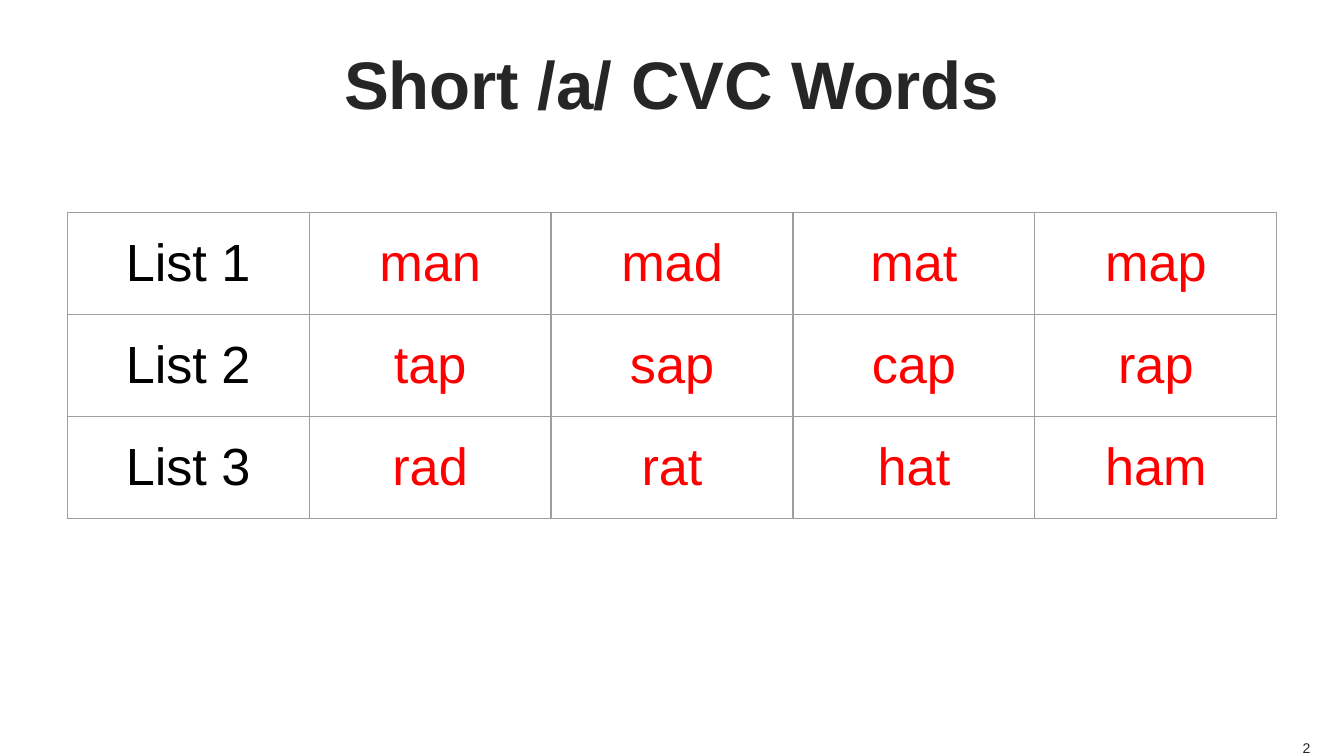
"""Build a slide with a table of short /a/ CVC words."""
import dataclasses

import lxml.etree
import pptx
import pptx.dml.color
import pptx.enum.text
import pptx.oxml.ns
import pptx.util


@dataclasses.dataclass(frozen=True)
class Theme:
    font: str = "Arial"
    heading: str = "262626"
    label: str = "000000"
    word: str = "FF0000"
    grid: str = "9E9E9E"
    title_size: float = 36
    word_size: float = 28
    number_size: float = 7.5


def write(frame, text, size, color, align, bold=False):
    frame.text = text
    frame.paragraphs[0].alignment = align
    font = frame.paragraphs[0].runs[0].font
    font.name = theme.font
    font.size = pptx.util.Pt(size)
    font.bold = bold
    font.color.rgb = pptx.dml.color.RGBColor.from_string(color)


def draw_borders(cell):
    qn = pptx.oxml.ns.qn
    properties = cell._tc.get_or_add_tcPr()
    for position, side in enumerate(("a:lnL", "a:lnR", "a:lnT", "a:lnB")):
        border = lxml.etree.Element(qn(side), w=str(pptx.util.Pt(0.75)))
        fill = lxml.etree.SubElement(border, qn("a:solidFill"))
        lxml.etree.SubElement(fill, qn("a:srgbClr"), val=theme.grid)
        properties.insert(position, border)


theme = Theme()
Pt = pptx.util.Pt
center = pptx.enum.text.PP_ALIGN.CENTER
middle = pptx.enum.text.MSO_ANCHOR.MIDDLE
word_lists = [
    ("List 1", "man", "mad", "mat", "map"),
    ("List 2", "tap", "sap", "cap", "rap"),
    ("List 3", "rad", "rat", "hat", "ham"),
]

deck = pptx.Presentation()
deck.slide_width, deck.slide_height = Pt(720), Pt(405)
slide = deck.slides.add_slide(deck.slide_layouts[5])

heading = slide.shapes.title
heading.left, heading.top, heading.width, heading.height = Pt(27), Pt(6.5), Pt(666), Pt(75.6)
heading_frame = heading.text_frame
heading_frame.margin_left = heading_frame.margin_right = 0
heading_frame.margin_top = heading_frame.margin_bottom = 0
heading_frame.vertical_anchor = middle
heading_frame.word_wrap = True
write(heading_frame, "Short /a/ CVC Words", theme.title_size, theme.heading, center, bold=True)

word_table = slide.shapes.add_table(
    len(word_lists), len(word_lists[0]), Pt(36), Pt(113.8), Pt(648), Pt(164.1)
).table
word_table.first_row = False
word_table.horz_banding = False
for row, words in enumerate(word_lists):
    for column, word in enumerate(words):
        cell = word_table.cell(row, column)
        cell.fill.background()
        cell.vertical_anchor = middle
        color = theme.word if column else theme.label
        write(cell.text_frame, word, theme.word_size, color, center)
        draw_borders(cell)

page_number = slide.shapes.add_textbox(Pt(692.6), Pt(396), Pt(9.4), Pt(9.4))
number_frame = page_number.text_frame
number_frame.margin_left = number_frame.margin_right = 0
number_frame.margin_top = number_frame.margin_bottom = 0
number_frame.word_wrap = False
number_frame.auto_size = pptx.enum.text.MSO_AUTO_SIZE.SHAPE_TO_FIT_TEXT
number_frame.vertical_anchor = pptx.enum.text.MSO_ANCHOR.BOTTOM
write(number_frame, "2", theme.number_size, theme.heading, pptx.enum.text.PP_ALIGN.RIGHT)

deck.save("out.pptx")
